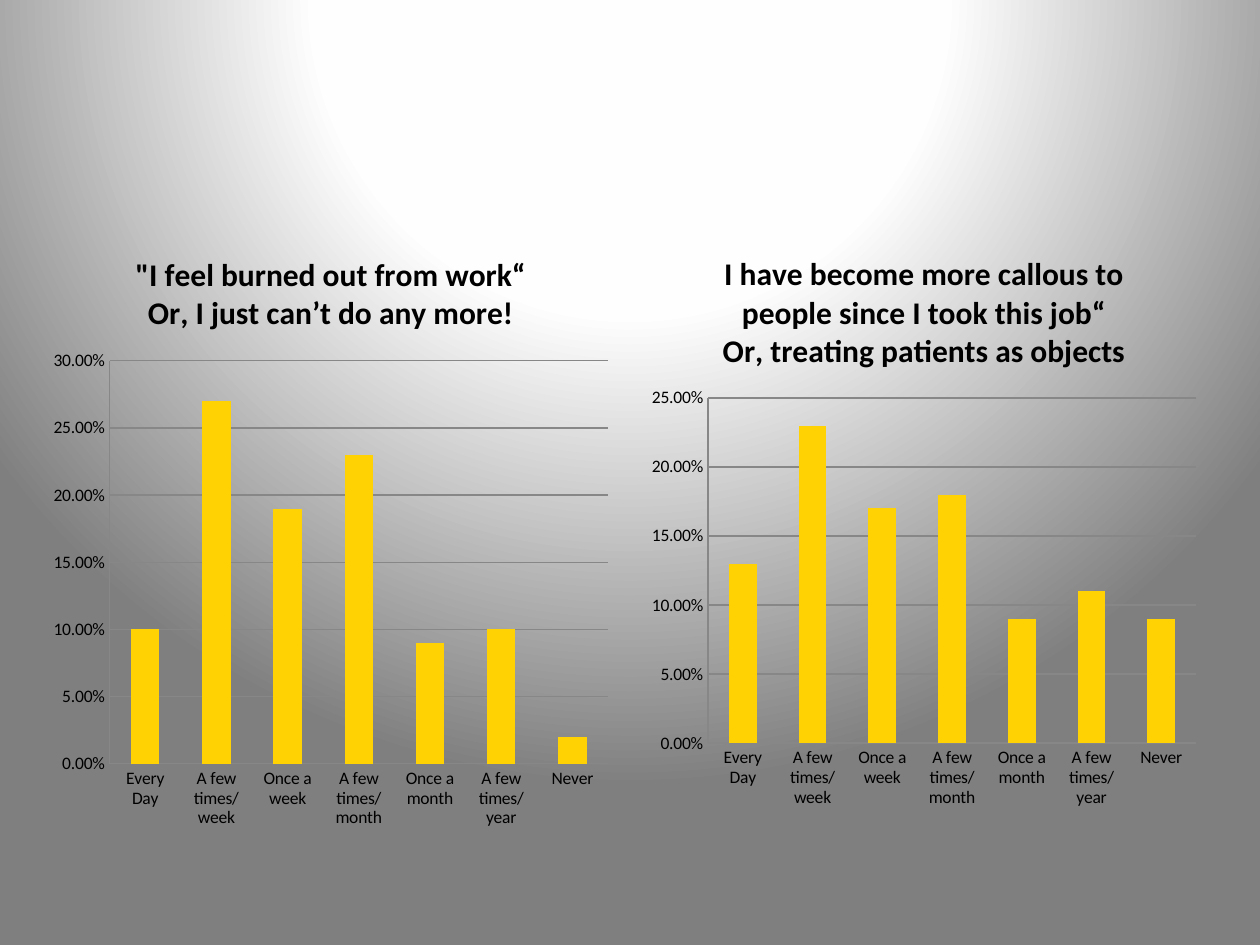
from dataclasses import dataclass

import lxml.etree
import pptx
import pptx.chart.data
import pptx.dml.color
import pptx.enum.chart
import pptx.oxml
import pptx.oxml.ns
import pptx.util

Pt = pptx.util.Pt


@dataclass(frozen=True)
class Theme:
    font: str = "Calibri"
    ink: str = "000000"
    bar: str = "FFD204"
    rule: str = "878787"
    stops: tuple = ((0, "FFFFFF"), (40, "FEFEFE"), (100, "7F7F7F"))
    title: int = 18
    label: int = 10


@dataclass(frozen=True)
class Panel:
    title: str
    vals: tuple
    top: float  # highest value on the axis
    box: tuple  # left, top, width, height in points


THEME = Theme()
CATS = ("Every Day", "A few times/week", "Once a week", "A few times/month",
        "Once a month", "A few times/year", "Never")
PANELS = (
    Panel("\"I feel burned out from work“\nOr, I just can’t do any more!",
          (0.10, 0.27, 0.19, 0.23, 0.09, 0.10, 0.02), 0.30,
          (24, 132, 330, 348)),
    Panel("I have become more callous to people since I took this job“\n"
          "Or, treating patients as objects",
          (0.13, 0.23, 0.17, 0.18, 0.09, 0.11, 0.09), 0.25,
          (366, 132, 324, 336)),
)


def color(code: str) -> pptx.dml.color.RGBColor:
    return pptx.dml.color.RGBColor.from_string(code)


def style(font, *, size: int, bold: bool = False) -> None:
    font.name = THEME.font
    font.size = Pt(size)
    font.bold = bold
    font.color.rgb = color(THEME.ink)


def write(frame, text: str, **form) -> None:
    """Fill a text frame, one paragraph for each line of text."""
    frame.text = text
    for para in frame.paragraphs:
        for run in para.runs:
            style(run.font, **form)


def stroke(line) -> None:
    line.color.rgb = color(THEME.rule)
    line.width = Pt(0.75)


def shade(slide) -> None:
    """Set the round gradient, centred above the slide."""
    slide.background.fill.solid()
    props = slide.element.xpath(".//p:bgPr")[0]
    stops = "".join(
        f'<a:gs pos="{pos * 1000}"><a:srgbClr val="{code}"/></a:gs>'
        for pos, code in THEME.stops)
    grad = pptx.oxml.parse_xml(
        f'<a:gradFill {pptx.oxml.ns.nsdecls("a")} rotWithShape="1">'
        f'<a:gsLst>{stops}</a:gsLst><a:path path="circle">'
        '<a:fillToRect l="50000" t="-80000" r="50000" b="180000"/>'
        '</a:path></a:gradFill>')
    props.replace(props[0], grad)


def draw(slide, panel: Panel) -> None:
    data = pptx.chart.data.CategoryChartData(number_format="0.00%")
    data.categories = CATS
    data.add_series("Series 1", panel.vals)
    kind = pptx.enum.chart.XL_CHART_TYPE.COLUMN_CLUSTERED
    chart = slide.shapes.add_chart(kind, *map(Pt, panel.box), data).chart
    style(chart.font, size=THEME.label)
    chart.has_legend = False

    # Title
    chart.has_title = True
    chart.chart_title.include_in_layout = False
    write(chart.chart_title.text_frame, panel.title,
          size=THEME.title, bold=True)

    # Bars
    plot = chart.plots[0]
    plot.gap_width = 150
    plot.vary_by_categories = False
    bars = plot.series[0]
    bars.format.fill.solid()
    bars.format.fill.fore_color.rgb = color(THEME.bar)

    # Axes
    for axis in (chart.category_axis, chart.value_axis):
        axis.major_tick_mark = pptx.enum.chart.XL_TICK_MARK.NONE
        axis.minor_tick_mark = pptx.enum.chart.XL_TICK_MARK.NONE
        stroke(axis.format.line)
    scale = chart.value_axis
    scale.minimum_scale = 0
    scale.maximum_scale = panel.top
    scale.major_unit = 0.05
    scale.tick_labels.number_format = "0.00%"
    scale.tick_labels.number_format_is_linked = False
    scale.has_major_gridlines = True
    stroke(scale.major_gridlines.format.line)


def main() -> None:
    deck = pptx.Presentation()
    deck.slide_width, deck.slide_height = Pt(720), Pt(540)
    slide = deck.slides.add_slide(deck.slide_layouts[6])
    shade(slide)
    for panel in PANELS:
        draw(slide, panel)
    deck.save("out.pptx")


if __name__ == "__main__":
    main()
